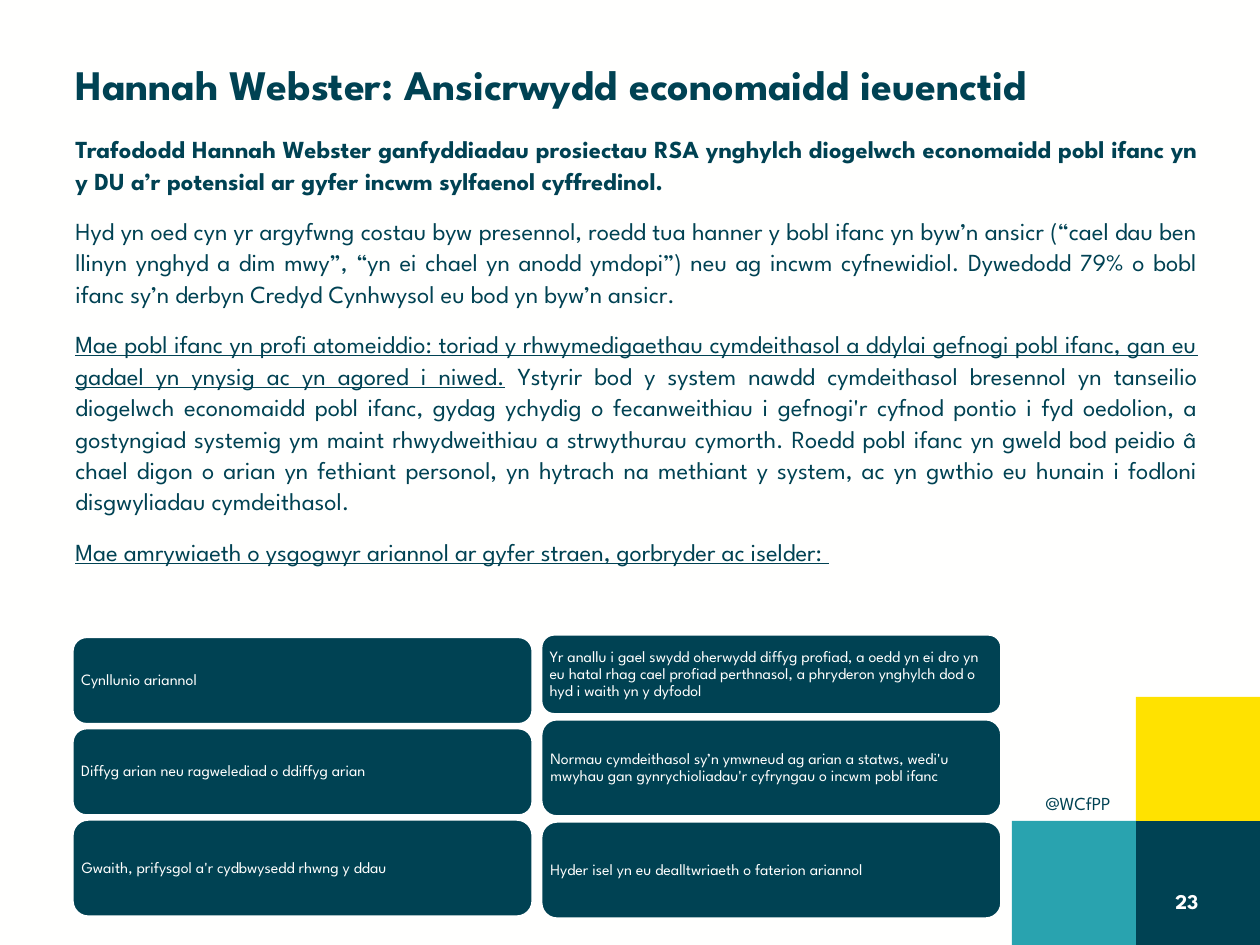
import pptx
import pptx.util
import pptx.dml.color
import pptx.enum.shapes
import pptx.enum.text

Cm = pptx.util.Cm
Pt = pptx.util.Pt
SHAPE = pptx.enum.shapes.MSO_SHAPE
ALIGN = pptx.enum.text.PP_ALIGN
ANCHOR = pptx.enum.text.MSO_ANCHOR

FONT = "League Spartan"
COLORS = {
    "paper": "FFFFFE",
    "white": "FFFFFF",
    "navy": "004253",
    "yellow": "FFE200",
    "teal": "29A3AF",
}

BODY = [
    [("Trafododd Hannah Webster ganfyddiadau prosiectau RSA ynghylch diogelwch economaidd "
      "pobl ifanc yn y DU a’r potensial ar gyfer incwm sylfaenol cyffredinol.", "bold")],
    [("Hyd yn oed cyn yr argyfwng costau byw presennol, roedd tua hanner y bobl ifanc yn "
      "byw’n ansicr (“cael dau ben llinyn ynghyd a dim mwy”, “yn ei chael yn anodd ymdopi”) "
      "neu ag incwm cyfnewidiol. Dywedodd 79% o bobl ifanc sy’n derbyn Credyd Cynhwysol eu "
      "bod yn byw’n ansicr.", "plain")],
    [("Mae pobl ifanc yn profi atomeiddio: toriad y rhwymedigaethau cymdeithasol a ddylai "
      "gefnogi pobl ifanc, gan eu gadael yn ynysig ac yn agored i niwed.", "underline"),
     (" Ystyrir bod y system nawdd cymdeithasol bresennol yn tanseilio diogelwch economaidd "
      "pobl ifanc, gydag ychydig o fecanweithiau i gefnogi'r cyfnod pontio i fyd oedolion, a "
      "gostyngiad systemig ym maint rhwydweithiau a strwythurau cymorth. Roedd pobl ifanc yn "
      "gweld bod peidio â chael digon o arian yn fethiant personol, yn hytrach na methiant y "
      "system, ac yn gwthio eu hunain i fodloni disgwyliadau cymdeithasol.", "plain")],
    [("Mae amrywiaeth o ysgogwyr ariannol ar gyfer straen, gorbryder ac iselder: ",
      "underline")],
]

MONEY_DRIVERS = [
    ("Cynllunio ariannol", 1.78),
    ("Diffyg arian neu ragwelediad o ddiffyg arian", 1.78),
    ("Gwaith, prifysgol a'r cydbwysedd rhwng y ddau", 1.98),
]
SOCIAL_DRIVERS = [
    ("Yr anallu i gael swydd oherwydd diffyg profiad, a oedd yn ei dro yn eu hatal rhag cael "
     "profiad perthnasol, a phryderon ynghylch dod o hyd i waith yn y dyfodol", 1.63),
    ("Normau cymdeithasol sy’n ymwneud ag arian a statws, wedi'u mwyhau gan gynrychioliadau'r "
     "cyfryngau o incwm pobl ifanc", 1.98),
    ("Hyder isel yn eu dealltwriaeth o faterion ariannol", 1.98),
]


def rgb(name):
    return pptx.dml.color.RGBColor.from_string(COLORS[name])


def style_run(r, size, color, bold=False, underline=False):
    r.font.name = FONT
    r.font.size = Pt(size)
    r.font.color.rgb = rgb(color)
    r.font.bold = bold
    r.font.underline = underline


def add_box(s, left, top, width, height, anchor=ANCHOR.TOP):
    tf = s.shapes.add_textbox(Cm(left), Cm(top), Cm(width), Cm(height)).text_frame
    tf.word_wrap = True
    tf.vertical_anchor = anchor
    return tf


def add_label(s, text, left, top, width, height, size, color="navy", bold=False,
              align=ALIGN.LEFT, anchor=ANCHOR.MIDDLE):
    tf = add_box(s, left, top, width, height, anchor)
    tf.text = text
    p = tf.paragraphs[0]
    p.alignment = align
    style_run(p.runs[0], size, color, bold)


def add_body(s, paragraphs):
    tf = add_box(s, 1.27, 2.54, 23.14, 14)
    for i, parts in enumerate(paragraphs):
        p = tf.add_paragraph() if i else tf.paragraphs[0]
        p.alignment = ALIGN.JUSTIFY
        p.line_spacing = 1.07
        p.space_before = Pt(2.8 if i else 0)
        p.space_after = Pt(8)
        for text, style in parts:
            r = p.add_run()
            r.text = text
            style_run(r, 14, "navy", style == "bold", style == "underline")


def add_block(s, kind, left, top, width, height, color):
    sp = s.shapes.add_shape(kind, Cm(left), Cm(top), Cm(width), Cm(height))
    sp.shadow.inherit = False
    sp.fill.solid()
    sp.fill.fore_color.rgb = rgb(color)
    sp.line.fill.background()
    return sp


def add_card(s, text, left, top, height, outline):
    sp = add_block(s, SHAPE.ROUNDED_RECTANGLE, left, top, 9.3, height, "navy")
    sp.line.color.rgb = rgb(outline)
    sp.line.width = Pt(2)
    tf = sp.text_frame
    tf.word_wrap = True
    tf.vertical_anchor = ANCHOR.MIDDLE
    tf.margin_left = tf.margin_right = tf.margin_top = tf.margin_bottom = Cm(0.1)
    tf.text = text
    p = tf.paragraphs[0]
    p.alignment = ALIGN.LEFT
    p.line_spacing = 0.9
    style_run(p.runs[0], 9, "paper")


def add_card_stack(s, cards, left, top, gap, outline):
    for text, height in cards:
        add_card(s, text, left, top, height, outline)
        top += height + gap


def add_corner(s):
    side = 2.5
    right, bottom = 25.4 - side, 19.05 - side
    for left, top, color in [(right, bottom, "navy"),
                             (right, bottom - side, "yellow"),
                             (right - side, bottom, "teal")]:
        add_block(s, SHAPE.RECTANGLE, left, top, side, side, color)


def main():
    prs = pptx.Presentation()
    prs.slide_width, prs.slide_height = Cm(25.4), Cm(19.05)
    s = prs.slides.add_slide(prs.slide_layouts[6])
    s.background.fill.solid()
    s.background.fill.fore_color.rgb = rgb("paper")

    add_corner(s)
    add_label(s, "@WCfPP", 20.83, 15.85, 2.06, 0.73, 10.5, anchor=ANCHOR.TOP)
    add_label(s, "Hannah Webster: Ansicrwydd economaidd ieuenctid",
              1.27, 0.1, 24.13, 3.18, 24, bold=True)
    add_body(s, BODY)
    add_label(s, "23", 18.49, 17.65, 5.92, 1.02, 12, "white", True, ALIGN.RIGHT)
    add_card_stack(s, MONEY_DRIVERS, 1.45, 12.83, 0.06, "white")
    add_card_stack(s, SOCIAL_DRIVERS, 10.9, 12.78, 0.08, "paper")
    prs.save("out.pptx")


if __name__ == "__main__":
    main()
